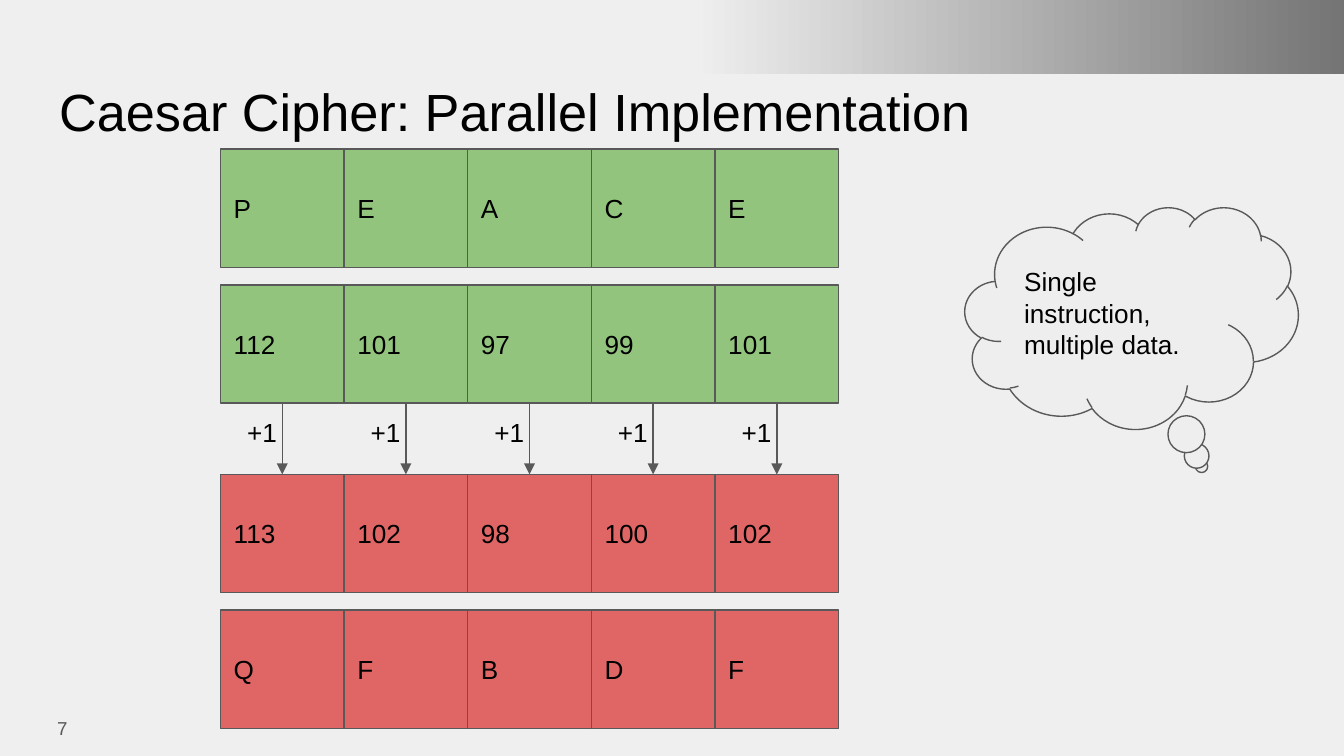
"""Build a slide that shows the Caesar cipher run in parallel."""
import dataclasses

import pptx
import pptx.dml.color
import pptx.enum.shapes
import pptx.enum.text
import pptx.oxml
import pptx.oxml.ns
import pptx.util

Inches = pptx.util.Inches
Kind = pptx.enum.shapes.MSO_SHAPE
Anchor = pptx.enum.text.MSO_ANCHOR
Align = pptx.enum.text.PP_ALIGN


@dataclasses.dataclass(frozen=True)
class Theme:
    font: str = "Arial"
    ink: str = "000000"
    grey: str = "595959"
    back: str = "EFEFEF"
    shade: str = "737373"
    cloud: str = "EEEEEE"
    green: str = "93C47D"
    red: str = "E06666"
    head: int = 28
    text: int = 14
    small: int = 10
    line: float = 0.75


THEME = Theme()
LEFT, WIDTH, HEIGHT = 1.64, 0.92, 0.88
ROWS = [
    (1.11, THEME.green, ["P", "E", "A", "C", "E"]),
    (2.12, THEME.green, ["112", "101", "97", "99", "101"]),
    (3.53, THEME.red, ["113", "102", "98", "100", "102"]),
    (4.54, THEME.red, ["Q", "F", "B", "D", "F"]),
]
START, END = 3, 3.53


def color(code):
    return pptx.dml.color.RGBColor.from_string(code)


def write(shape, text, size=THEME.text, ink=THEME.ink, anchor=Anchor.MIDDLE, align=Align.LEFT):
    frame = shape.text_frame
    frame.text = text
    frame.word_wrap = True
    frame.auto_size = pptx.enum.text.MSO_AUTO_SIZE.NONE
    frame.vertical_anchor = anchor
    frame.margin_left = frame.margin_right = Inches(0.1)
    frame.margin_top = frame.margin_bottom = Inches(0.1)
    para = frame.paragraphs[0]
    para.alignment = align
    font = para.runs[0].font
    font.name = THEME.font
    font.size = pptx.util.Pt(size)
    font.color.rgb = color(ink)


def add_title(slide, text):
    title = slide.shapes.title
    title.left, title.top = Inches(0.34), Inches(0.49)
    title.width, title.height = Inches(9.32), Inches(0.63)
    write(title, text, THEME.head, anchor=Anchor.TOP)


def add_label(slide, text, box, **style):
    write(slide.shapes.add_textbox(*map(Inches, box)), text, **style)


def add_box(slide, kind, text, box, fill):
    shape = slide.shapes.add_shape(kind, *map(Inches, box))
    shape.shadow.inherit = False
    shape.fill.solid()
    shape.fill.fore_color.rgb = color(fill)
    shape.line.color.rgb = color(THEME.grey)
    shape.line.width = pptx.util.Pt(THEME.line)
    write(shape, text)
    return shape


def add_band(slide):
    band = slide.shapes.add_shape(Kind.RECTANGLE, *map(Inches, (5.15, -0.06, 4.91, 0.61)))
    band.shadow.inherit = False
    band.line.fill.background()
    band.fill.gradient()
    band.fill.gradient_angle = 0
    for stop, code in zip(band.fill.gradient_stops, (THEME.back, THEME.shade)):
        stop.color.rgb = color(code)


def add_arrow(slide, x, top, bottom):
    kind = pptx.enum.shapes.MSO_CONNECTOR.STRAIGHT
    arrow = slide.shapes.add_connector(kind, *map(Inches, (x, top, x, bottom)))
    arrow.line.color.rgb = color(THEME.grey)
    arrow.line.width = pptx.util.Pt(THEME.line)
    tip = pptx.oxml.parse_xml(f'<a:tailEnd {pptx.oxml.ns.nsdecls("a")} type="triangle"/>')
    arrow.line._get_or_add_ln().append(tip)
    blank = pptx.oxml.parse_xml(f'<a:effectLst {pptx.oxml.ns.nsdecls("a")}/>')
    arrow._element.spPr.append(blank)


def add_row(slide, top, fill, words):
    for col, word in enumerate(words):
        box = (LEFT + col * WIDTH, top, WIDTH, HEIGHT)
        add_box(slide, Kind.RECTANGLE, word, box, fill)


def add_step(slide, col):
    x = LEFT + col * WIDTH
    add_arrow(slide, x + WIDTH / 2, START, END)
    add_label(slide, "+1", (x + 0.1, START, 0.56, END - START), anchor=Anchor.TOP)


def main():
    deck = pptx.Presentation()
    deck.slide_width, deck.slide_height = Inches(10), Inches(10 * 9 / 16)
    slide = deck.slides.add_slide(deck.slide_layouts[5])
    slide.background.fill.solid()
    slide.background.fill.fore_color.rgb = color(THEME.back)
    add_band(slide)
    add_title(slide, "Caesar Cipher: Parallel Implementation")
    add_label(slide, "7", (0, 5.2, 0.6, 0.43), size=THEME.small, ink=THEME.grey, align=Align.RIGHT)
    for row in ROWS:
        add_row(slide, *row)
    for col in range(5):
        add_step(slide, col)
    cloud = add_box(slide, Kind.CLOUD_CALLOUT, "Single instruction, multiple data.",
                    (7.18, 1.54, 2.48, 1.65), THEME.cloud)
    cloud.adjustments[0], cloud.adjustments[1] = 0.21, 0.67
    deck.save("out.pptx")


if __name__ == "__main__":
    main()
